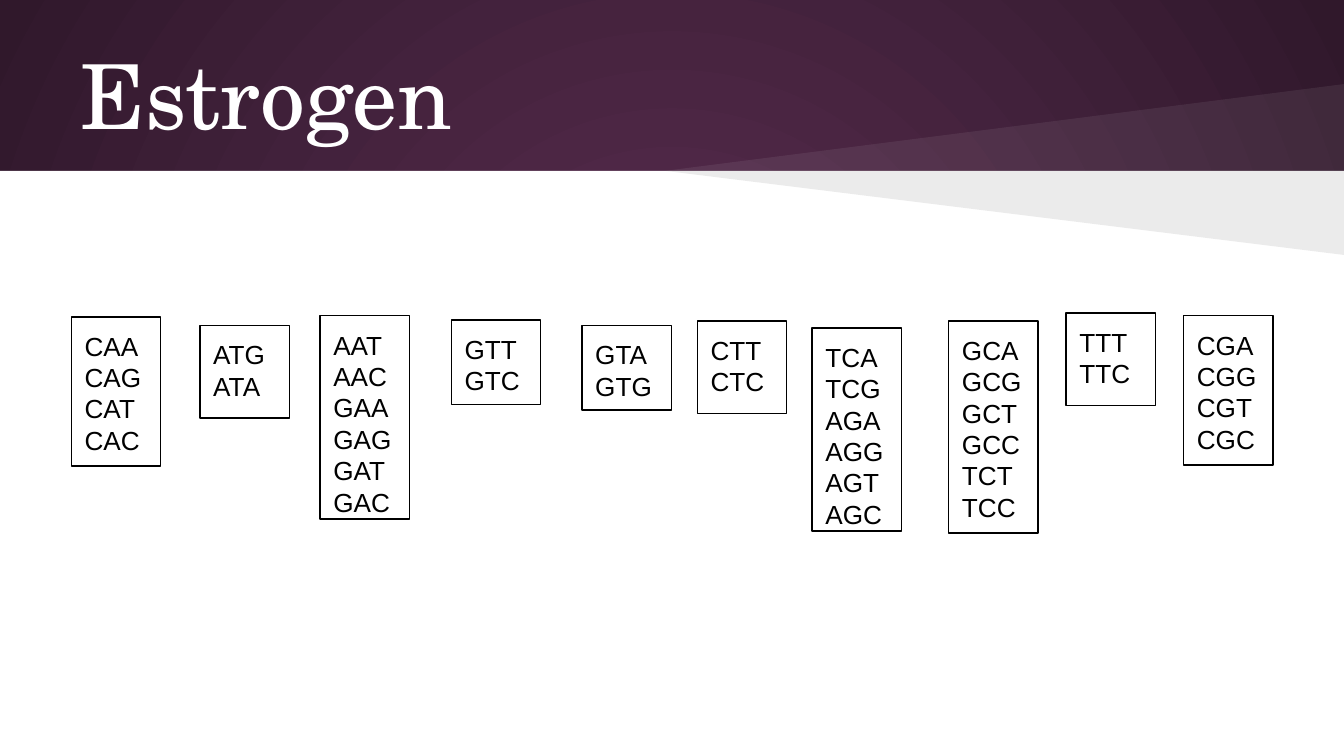
from lxml import etree
from pptx import Presentation
from pptx import util as u
from pptx.dml.color import RGBColor
from pptx.enum import shapes, text
from pptx.oxml.ns import qn

# Content: left, top, height in cm, then the codons
TITLE = "Estrogen"
GROUPS = [
    (1.35, 5.99, 2.82, "CAA CAG CAT CAC"),
    (3.78, 6.15, 1.75, "ATG ATA"),
    (6.05, 5.97, 3.84, "AAT AAC GAA GAG GAT GAC"),
    (8.53, 6.05, 1.6, "GTT GTC"),
    (11, 6.15, 1.6, "GTA GTG"),
    (13.18, 6.07, 1.75, "CTT CTC"),
    (15.35, 6.2, 3.84, "TCA TCG AGA AGG AGT AGC"),
    (17.93, 6.07, 4.01, "GCA GCG GCT GCC TCT TCC"),
    (20.15, 5.92, 1.75, "TTT TTC"),
    (22.37, 5.97, 2.82, "CGA CGG CGT CGC"),
]

THEME = {
    "glow": "592D50", "edge": "30182B", "white": "FFFFFF", "black": "000000",
    "head": ("TeX Gyre Schola", 48), "body": ("Arial", 14),
}
WIDE, HIGH = 25.4, 14.29
BAND = 3.23            # lower edge of the dark band
TIP = 12.57            # left tip of both wedges
BOX = 1.69             # width of a codon box
PAD = 0.25


def color(name):
    return RGBColor.from_string(THEME[name])


def paint(shape, name, alpha=None):
    shape.shadow.inherit = False
    shape.line.fill.background()
    shape.fill.solid()
    shape.fill.fore_color.rgb = color(name)
    if alpha:
        tint = shape.element.spPr.find(".//" + qn("a:srgbClr"))
        etree.SubElement(tint, qn("a:alpha"), val=str(alpha * 1000))


def write(shape, lines, font, ink, anchor):
    frame = shape.text_frame
    frame.word_wrap = True
    frame.vertical_anchor = anchor
    frame.margin_left = frame.margin_right = u.Cm(PAD)
    frame.margin_top = frame.margin_bottom = u.Cm(PAD)
    frame.text = "\n".join(lines)
    for para in frame.paragraphs:
        para.alignment = text.PP_ALIGN.LEFT
        for run in para.runs:
            run.font.name, size = THEME[font]
            run.font.size = u.Pt(size)
            run.font.color.rgb = color(ink)


deck = Presentation()
deck.slide_width, deck.slide_height = u.Cm(WIDE), u.Cm(HIGH)
slide = deck.slides.add_slide(deck.slide_layouts[6])
parts = slide.shapes

# Background: radial glow from the centre
back = slide.background.fill
back.gradient()
for stop, name in zip(back.gradient_stops, ("glow", "edge")):
    stop.color.rgb = color(name)
grad = slide.element.find(".//" + qn("a:gradFill"))
grad.remove(grad.find(qn("a:lin")))
ring = etree.SubElement(grad, qn("a:path"), path="circle")
etree.SubElement(ring, qn("a:fillToRect"), l="50000", t="50000", r="50000", b="50000")

# White page below the band
page = parts.add_shape(shapes.MSO_SHAPE.RECTANGLE, 0, u.Cm(BAND),
                       u.Cm(WIDE), u.Cm(HIGH - BAND))
paint(page, "white")

# Wedges above and below the band's edge
for end, name, alpha in ((1.59, "white", 7), (4.82, "black", 8)):
    pen = parts.build_freeform(u.Cm(WIDE), u.Cm(BAND))
    pen.add_line_segments([(u.Cm(TIP), u.Cm(BAND)), (u.Cm(WIDE), u.Cm(end))])
    paint(pen.convert_to_shape(), name, alpha)

# Title
head = parts.add_textbox(u.Cm(1.27), u.Cm(0.58), u.Cm(22.86), u.Cm(2.39))
write(head, [TITLE], "head", "white", text.MSO_ANCHOR.MIDDLE)

# Codon boxes
for left, top, tall, codons in GROUPS:
    box = parts.add_shape(shapes.MSO_SHAPE.RECTANGLE, u.Cm(left), u.Cm(top),
                          u.Cm(BOX), u.Cm(tall))
    box.shadow.inherit = False
    box.fill.background()
    box.line.color.rgb = color("black")
    box.line.width = u.Pt(0.75)
    write(box, codons.split(), "body", "black", text.MSO_ANCHOR.TOP)

deck.save("out.pptx")
